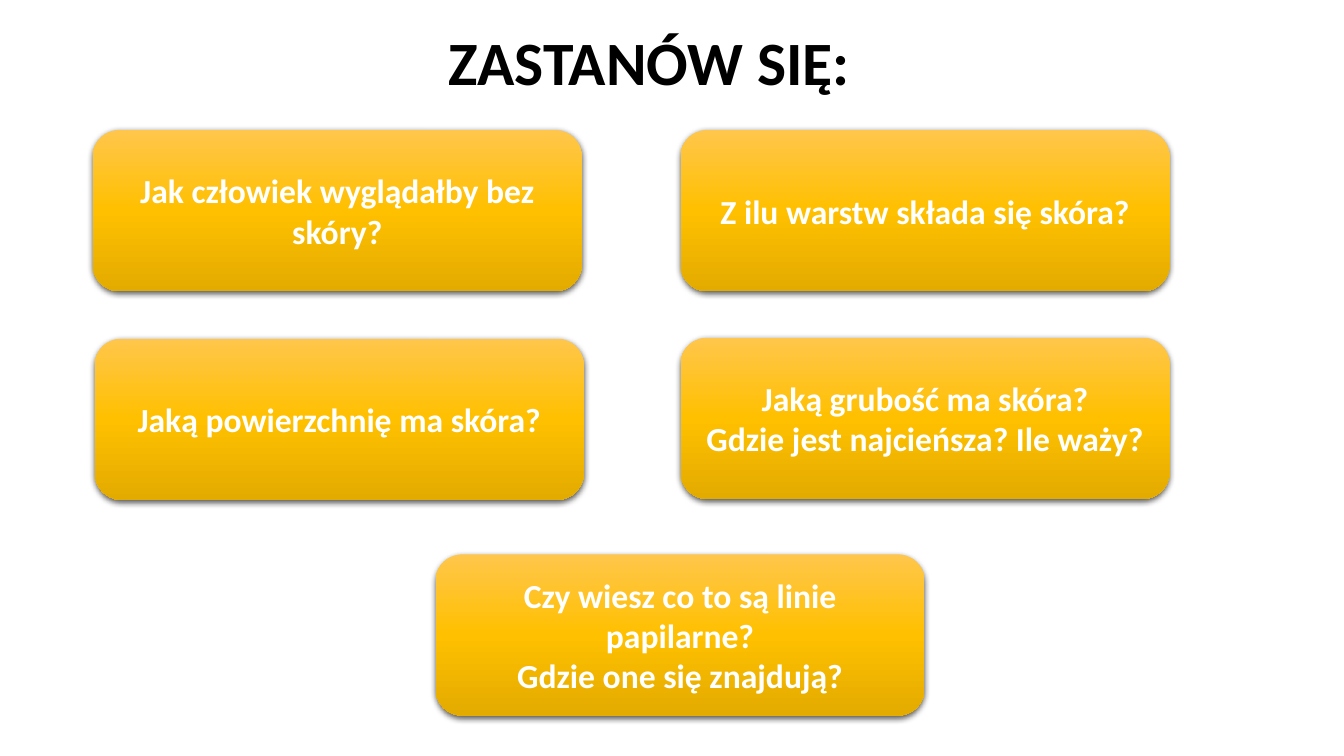
from copy import deepcopy

from lxml import etree
from pptx import Presentation
from pptx.dml.color import RGBColor
from pptx.enum.shapes import MSO_SHAPE
from pptx.enum.text import MSO_ANCHOR, PP_ALIGN
from pptx.oxml.ns import qn

PX = 9144  # 100 px to the inch
ROUNDED = MSO_SHAPE.ROUNDED_RECTANGLE
MIDDLE = MSO_ANCHOR.MIDDLE
CENTER = PP_ALIGN.CENTER
BLACK = RGBColor(0x00, 0x00, 0x00)
WHITE = RGBColor(0xFF, 0xFF, 0xFF)
GOLD_STOPS = [
    (0, RGBColor(0xFF, 0xC6, 0x4B)),
    (0.5, RGBColor(0xFF, 0xC0, 0x00)),
    (1, RGBColor(0xE3, 0xAB, 0x00)),
]
POINT = 12700

# Content
TITLE = "ZASTANÓW SIĘ:"
TITLE_BOX = (69, 25, 1150, 80)
CARD_SIZE = (485, 160)
QUESTIONS = [  # left, top, paragraphs
    (92, 129, ["Jak człowiek wyglądałby bez skóry?"]),
    (675, 129, ["Z ilu warstw składa się skóra?"]),
    (94, 336, ["Jaką powierzchnię ma skóra?"]),
    (432, 550, ["Czy wiesz co to są linie papilarne?", "Gdzie one się znajdują?"]),
    (675, 335, ["Jaką grubość ma skóra?", "Gdzie jest najcieńsza? Ile waży?"]),
]


def write_text(shape, lines, size, color, line_spacing=1.0):
    frame = shape.text_frame
    frame.word_wrap = True
    frame.vertical_anchor = MIDDLE
    frame.text = "\n".join(lines)
    for paragraph in frame.paragraphs:
        paragraph.alignment = CENTER
        paragraph.line_spacing = line_spacing
        font = paragraph.runs[0].font
        font.name = "Calibri"
        font.size = size * POINT
        font.bold = True
        font.color.rgb = color


def fill_gold(shape):
    shape.fill.gradient()
    shape.fill.gradient_angle = 270  # top to bottom
    stop_list = shape.element.spPr.find(".//" + qn("a:gsLst"))
    stop_list.append(deepcopy(stop_list[0]))
    for stop, (position, color) in zip(shape.fill.gradient_stops, GOLD_STOPS):
        stop.position = position
        stop.color.rgb = color


def add_shadow(shape):
    shape.shadow.inherit = False
    effects = shape.element.spPr.find(qn("a:effectLst"))
    shadow = etree.SubElement(
        effects, qn("a:outerShdw"), blurRad=str(int(4.5 * POINT)),
        dist=str(int(1.5 * POINT)), dir="5400000", algn="ctr", rotWithShape="0")
    color = etree.SubElement(shadow, qn("a:srgbClr"), val=str(BLACK))
    etree.SubElement(color, qn("a:alpha"), val="63000")


presentation = Presentation()
presentation.slide_width = 1333 * PX
presentation.slide_height = 750 * PX
slide = presentation.slides.add_slide(presentation.slide_layouts[5])

# Title
title = slide.shapes.title
title.left, title.top, title.width, title.height = [n * PX for n in TITLE_BOX]
write_text(title, [TITLE], size=44, color=BLACK, line_spacing=0.9)

# Question cards
for left, top, lines in QUESTIONS:
    card = slide.shapes.add_shape(
        ROUNDED, *[n * PX for n in (left, top, *CARD_SIZE)])
    fill_gold(card)
    card.line.fill.background()
    add_shadow(card)
    write_text(card, lines, size=24, color=WHITE)

presentation.save("out.pptx")
